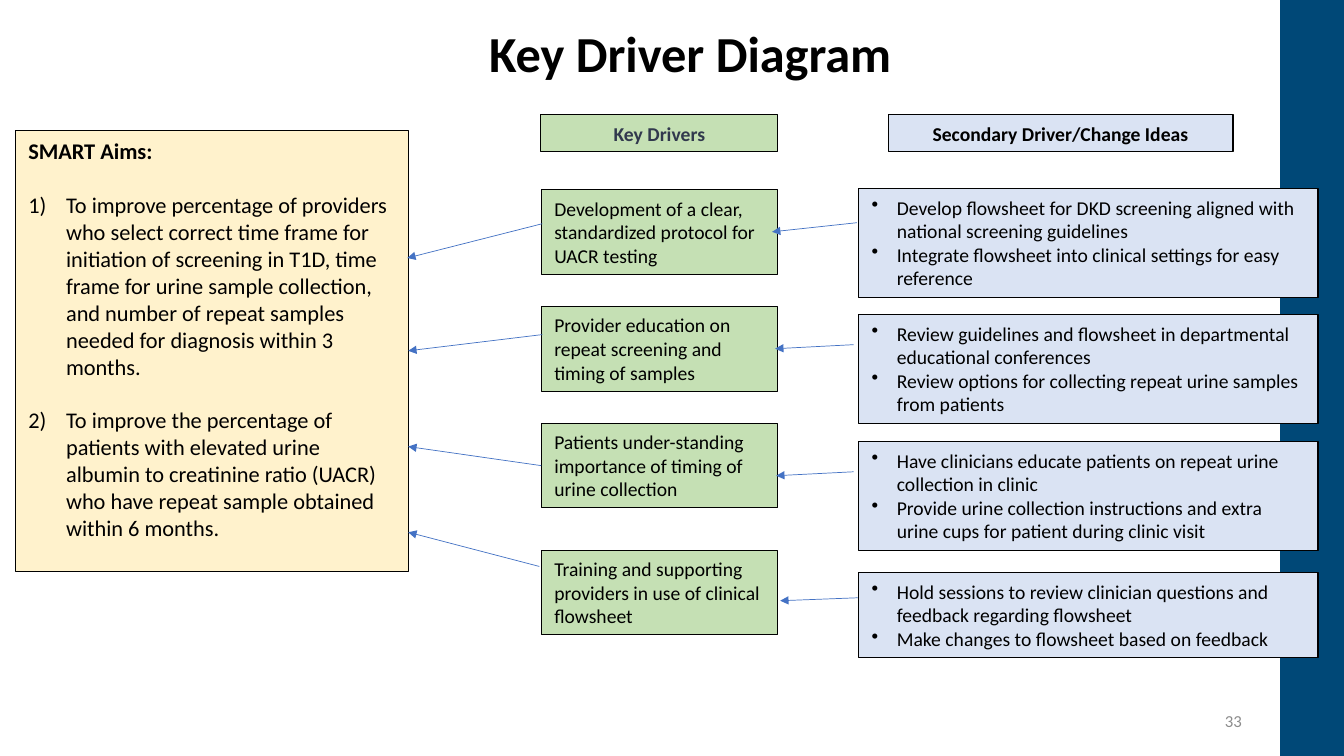
from dataclasses import dataclass

from pptx import Presentation
from pptx.dml.color import RGBColor
from pptx.enum.shapes import MSO_CONNECTOR, MSO_SHAPE
from pptx.enum.text import MSO_ANCHOR, MSO_AUTO_SIZE, PP_ALIGN
from pptx.oxml.ns import qn
from pptx.util import Pt
from lxml import etree

RECT, STRAIGHT = MSO_SHAPE.RECTANGLE, MSO_CONNECTOR.STRAIGHT
LEFT, CENTER, RIGHT = PP_ALIGN.LEFT, PP_ALIGN.CENTER, PP_ALIGN.RIGHT
TOP, MIDDLE = MSO_ANCHOR.TOP, MSO_ANCHOR.MIDDLE
NO_FIT = MSO_AUTO_SIZE.NONE


@dataclass(frozen=True)
class Theme:
    font: str = "Calibri"
    black: str = "000000"
    slate: str = "31394D"
    grey: str = "8C8C8C"
    navy: str = "004877"
    cream: str = "FFF2CC"
    green: str = "C5E0B4"
    pale_blue: str = "DAE3F3"
    arrow: str = "4472C4"
    title: int = 36
    aims: int = 16
    body: int = 14
    number: int = 12


T = Theme()


def write(tf, texts, size, color=T.black, bold=False, align=LEFT, bullet=None, indent=0):
    """Fill a text frame; bullet is an (element, attribute, value) triple."""
    tf.word_wrap, tf.auto_size = True, NO_FIT
    tf.margin_left = tf.margin_right = Pt(9.4)
    tf.margin_top = tf.margin_bottom = Pt(5)
    tf.text = "\n".join(texts)
    for p in tf.paragraphs:
        p.alignment = align
        if bullet:
            tag, attr, value = bullet
            pPr = p._p.get_or_add_pPr()
            pPr.set("marL", str(Pt(indent)))
            pPr.set("indent", str(-Pt(indent)))
            etree.SubElement(pPr, qn(tag)).set(attr, value)
        for r in p.runs:
            r.font.name, r.font.size, r.font.bold = T.font, Pt(size), bold
            r.font.color.rgb = RGBColor.from_string(color)


def box(x, y, w, h, fill, line=T.black):
    """Draw a filled rectangle and return its text frame."""
    sp = s.shapes.add_shape(RECT, Pt(x), Pt(y), Pt(w), Pt(h))
    sp.shadow.inherit = False
    sp.fill.solid()
    sp.fill.fore_color.rgb = RGBColor.from_string(fill)
    sp.line.color.rgb = RGBColor.from_string(line)
    sp.line.width = Pt(0.75)
    sp.text_frame.vertical_anchor = TOP
    return sp.text_frame


prs = Presentation()
prs.slide_width, prs.slide_height = Pt(960), Pt(540)
s = prs.slides.add_slide(prs.slide_layouts[5])

# Side band
box(914.4, 0, 45.6, 540, T.navy, T.navy)

# Title
title = s.shapes.title
title.left, title.top, title.width, title.height = Pt(334), Pt(10.8), Pt(318.2), Pt(53.3)
title.text_frame.vertical_anchor = TOP
write(title.text_frame, ["Key Driver Diagram"], T.title, bold=True, align=CENTER)

# SMART aims
tf = box(10.8, 93, 280.8, 315.4, T.cream)
write(tf, [
    "To improve percentage of providers who select correct time frame for initiation of "
    "screening in T1D, time frame for urine sample collection, and number of repeat "
    "samples needed for diagnosis within 3 months.",
    "To improve the percentage of patients with elevated urine albumin to creatinine "
    "ratio (UACR) who have repeat sample obtained within 6 months.",
], T.aims, bullet=("a:buAutoNum", "type", "arabicParenR"), indent=27)
for p in tf.paragraphs:
    p.space_before = Pt(19.3)
heading = box(10.8, 93, 280.8, 30, T.cream)
heading_box = s.shapes[-1]
heading_box.fill.background()
heading_box.line.fill.background()
write(heading, ["SMART Aims:"], T.aims, bold=True)
tf.margin_top = Pt(24.5)
tf.paragraphs[0].space_before = Pt(0)
tf.margin_top = Pt(43.8)

# Column headings
write(box(386.4, 81.8, 169.2, 26.6, T.green), ["Key Drivers"],
      T.body, T.slate, True, CENTER)
write(box(634.4, 82, 246.4, 26.6, T.pale_blue), ["Secondary Driver/Change Ideas"],
      T.body, bold=True, align=CENTER)

# Key drivers: top, text
drivers = [
    (135.4, "Development of a clear, standardized protocol for UACR testing"),
    (218.9, "Provider education on repeat screening and timing of samples"),
    (302.4, "Patients under-standing importance of timing of urine collection"),
    (393.1, "Training and supporting providers in use of clinical flowsheet"),
]
for y, text in drivers:
    write(box(386.5, y, 169.2, 60.5, T.green), [text], T.body)

# Change ideas: top, height, bullets
ideas = [
    (134.6, 77.8, ["Develop flowsheet for DKD screening aligned with national screening guidelines",
                   "Integrate flowsheet into clinical settings for easy reference"]),
    (224.6, 77.8, ["Review guidelines and flowsheet in departmental educational conferences",
                   "Review options for collecting repeat urine samples from patients"]),
    (315.4, 77.8, ["Have clinicians educate patients on repeat urine collection in clinic",
                   "Provide urine collection instructions and extra urine cups for patient "
                   "during clinic visit"]),
    (409, 60.5, ["Hold sessions to review clinician questions and feedback regarding flowsheet",
                 "Make changes to flowsheet based on feedback"]),
]
for y, h, texts in ideas:
    write(box(613.2, y, 328.3, h, T.pale_blue), texts, T.body,
          bullet=("a:buChar", "char", "•"), indent=18)

# Arrows: from x, y to x, y
arrows = [
    (612, 159.1, 551.5, 165.6), (609.8, 246.2, 553.7, 249.1),
    (609.8, 337, 554.4, 339.8), (612.7, 427, 557.3, 429.1),
    (387.4, 159.8, 290.9, 184.3), (387.4, 239, 291.6, 250.6),
    (386.6, 332.6, 291.6, 319), (385.2, 404.6, 291.6, 380.2),
]
for ends in arrows:
    c = s.shapes.add_connector(STRAIGHT, *map(Pt, ends))
    c.line.color.rgb = RGBColor.from_string(T.arrow)
    c.line.width = Pt(0.5)
    spPr = c.element.spPr
    etree.SubElement(spPr.find(qn("a:ln")), qn("a:tailEnd")).set("type", "triangle")
    etree.SubElement(spPr, qn("a:effectLst"))

# Slide number
tf = s.shapes.add_textbox(Pt(678.2), Pt(500.4), Pt(216), Pt(28.8)).text_frame
tf.vertical_anchor = MIDDLE
write(tf, ["33"], T.number, T.grey, align=RIGHT)
tf.margin_right = Pt(7.2)

prs.save("out.pptx")
